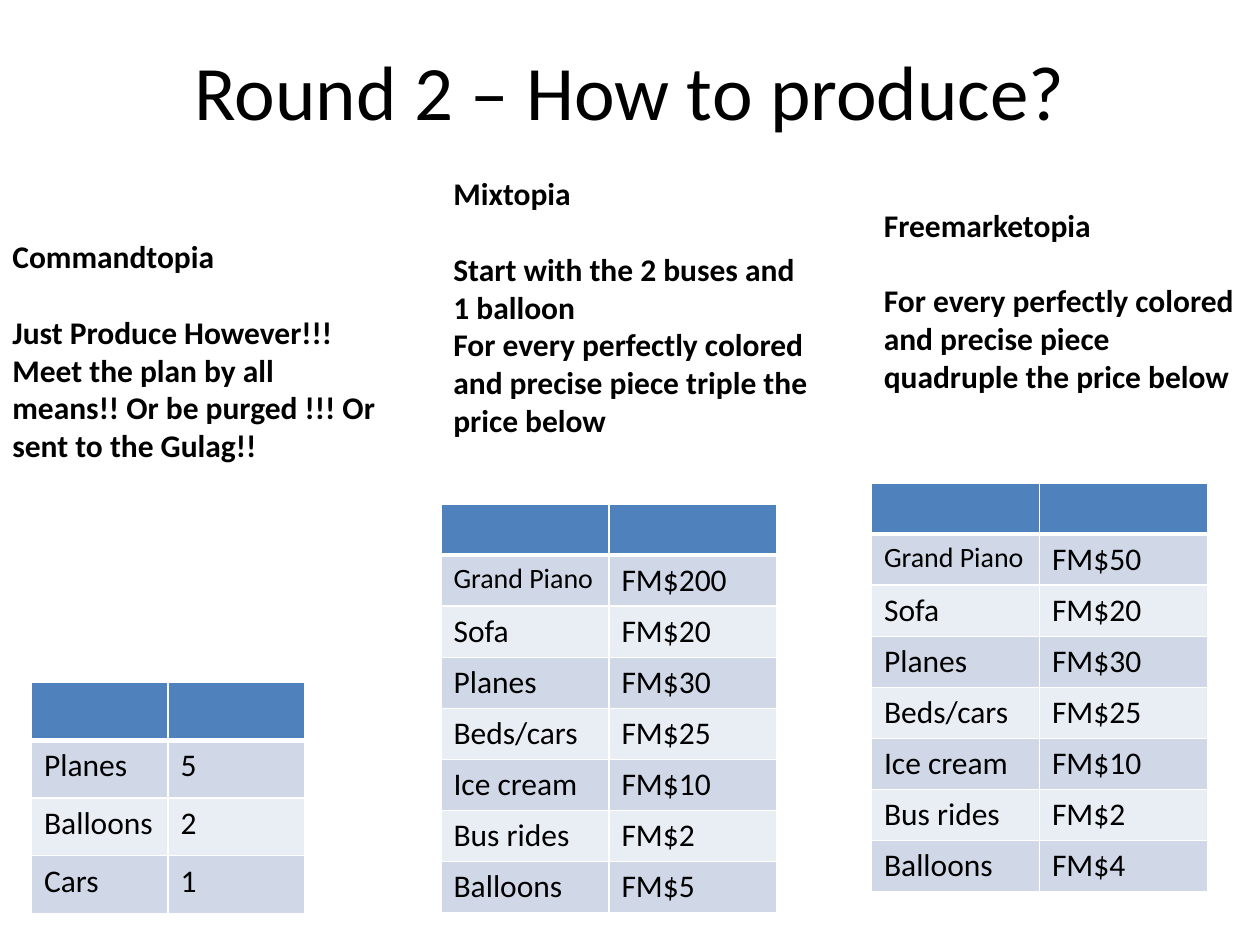
"""Build the Round 2 slide comparing how three economies produce."""
import pptx
import pptx.dml.color
import pptx.enum.text
import pptx.oxml
import pptx.oxml.ns
import pptx.util

Pt = pptx.util.Pt
Color = pptx.dml.color.RGBColor
Align = pptx.enum.text.PP_ALIGN

BLACK = Color(0x00, 0x00, 0x00)
WHITE = Color(0xFF, 0xFF, 0xFF)
BLUE = Color(0x4F, 0x81, 0xBD)
BANDS = (Color(0xE9, 0xED, 0xF4), Color(0xD0, 0xD8, 0xE8))

GOODS = ("Grand Piano", "Sofa", "Planes", "Beds/cars", "Ice cream", "Bus rides", "Balloons")


class Page:
    def __init__(self, slide, font="Calibri", size=18):
        self.slide = slide
        self.font = font
        self.size = size

    def run(self, para, text, size=None, bold=False):
        run = para.add_run()
        run.text = text
        run.font.name = self.font
        run.font.size = Pt(size or self.size)
        run.font.bold = bold
        run.font.color.rgb = BLACK

    def text(self, box, lines, size=None, bold=False, align=Align.LEFT, gap=0):
        frame = self.slide.shapes.add_textbox(*map(Pt, box)).text_frame
        frame.word_wrap = True
        for i, line in enumerate(lines):
            para = frame.add_paragraph() if i else frame.paragraphs[0]
            para.alignment = align
            self.run(para, line, size, bold)
        frame.paragraphs[0].space_after = Pt(gap)

    def border(self, cell, widths):
        props = cell._tc.get_or_add_tcPr()
        for i, (side, width) in enumerate(zip("LRTB", widths)):
            props.insert(i, pptx.oxml.parse_xml(
                f'<a:ln{side} {pptx.oxml.ns.nsdecls("a")} w="{Pt(width)}">'
                f'<a:solidFill><a:srgbClr val="{WHITE}"/></a:solidFill></a:ln{side}>'))

    def table(self, left, top, wide, high, rows):
        count = len(rows) + 1
        grid = self.slide.shapes.add_table(
            count, 2, Pt(left), Pt(top), Pt(2 * wide), Pt(count * high)).table
        for col in grid.columns:
            col.width = Pt(wide)
        for i, row in enumerate([("", "")] + rows):
            grid.rows[i].height = Pt(high)
            for j, text in enumerate(row):
                cell = grid.cell(i, j)
                cell.fill.solid()
                cell.fill.fore_color.rgb = BANDS[i % 2] if i else BLUE
                self.border(cell, (1, 1, 3 if i == 1 else 1, 1 if i else 3))
                if text:
                    size = 16 if text == "Grand Piano" else None
                    self.run(cell.text_frame.paragraphs[0], text, size)


def main():
    deck = pptx.Presentation()
    deck.slide_width, deck.slide_height = Pt(720), Pt(540)
    page = Page(deck.slides.add_slide(deck.slide_layouts[6]))

    page.text((36, 21.6, 648, 90), ["Round 2 – How to produce?"], 44, align=Align.CENTER)

    notes = (
        ((0, 132, 222, 225), ["Commandtopia", "Just Produce However!!!",
         "Meet the plan by all means!! Or be purged !!! Or sent to the Gulag!!"]),
        ((252, 96, 222, 247), ["Mixtopia", "Start with the 2 buses and 1 balloon",
         "For every perfectly colored and precise piece triple the price below"]),
        ((498, 114, 222, 117), ["Freemarketopia",
         "For every perfectly colored and precise piece quadruple the price below"]),
    )
    for box, lines in notes:
        page.text(box, lines, bold=True, gap=21.6)

    page.table(18, 390, 78, 33, [("Planes", "5"), ("Balloons", "2"), ("Cars", "1")])
    for left, top, costs in ((498, 276, (50, 20, 30, 25, 10, 2, 4)),
                             (252, 288, (200, 20, 30, 25, 10, 2, 5))):
        page.table(left, top, 96, 29.2, [(good, f"FM${cost}") for good, cost in zip(GOODS, costs)])

    deck.save("out.pptx")


if __name__ == "__main__":
    main()
